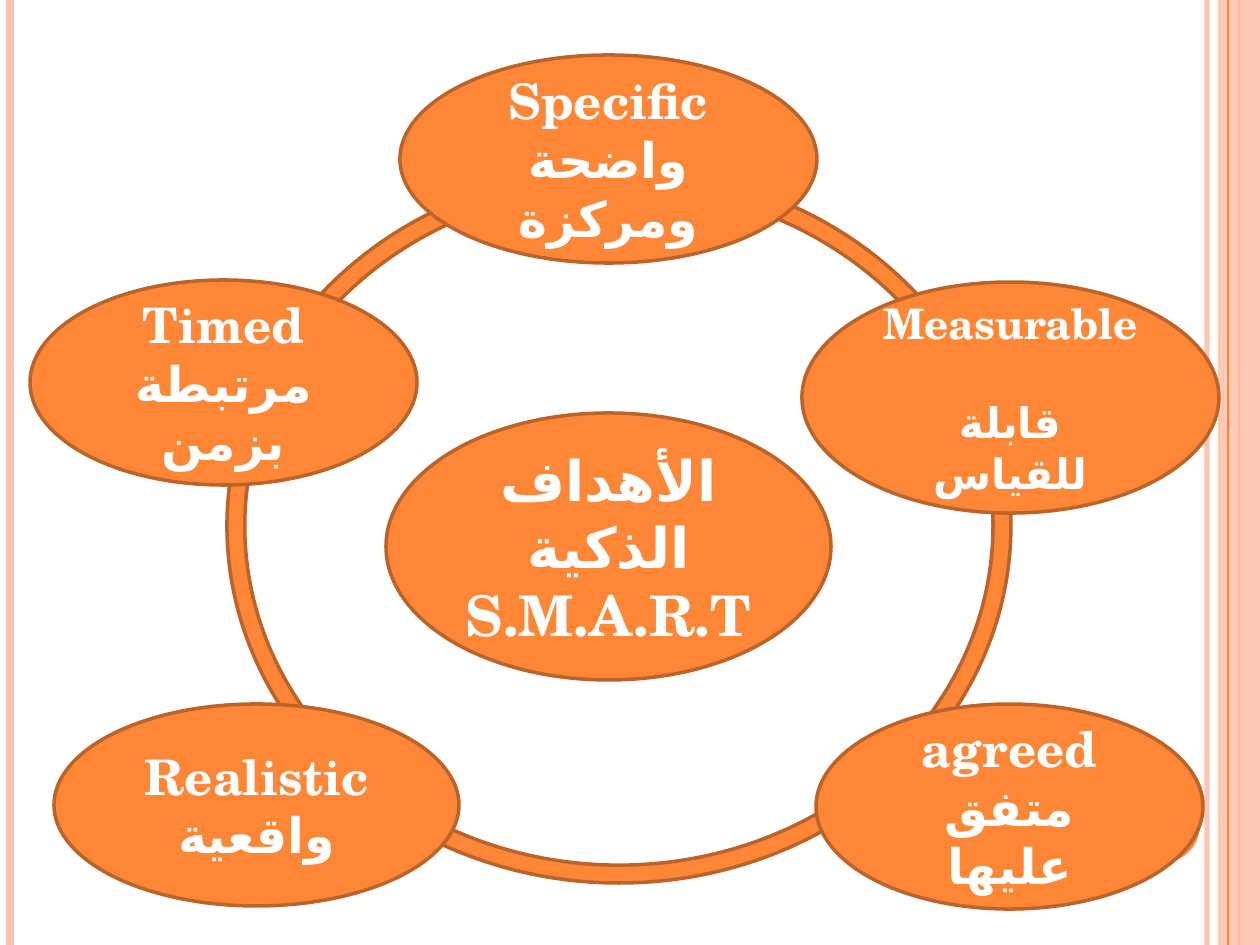
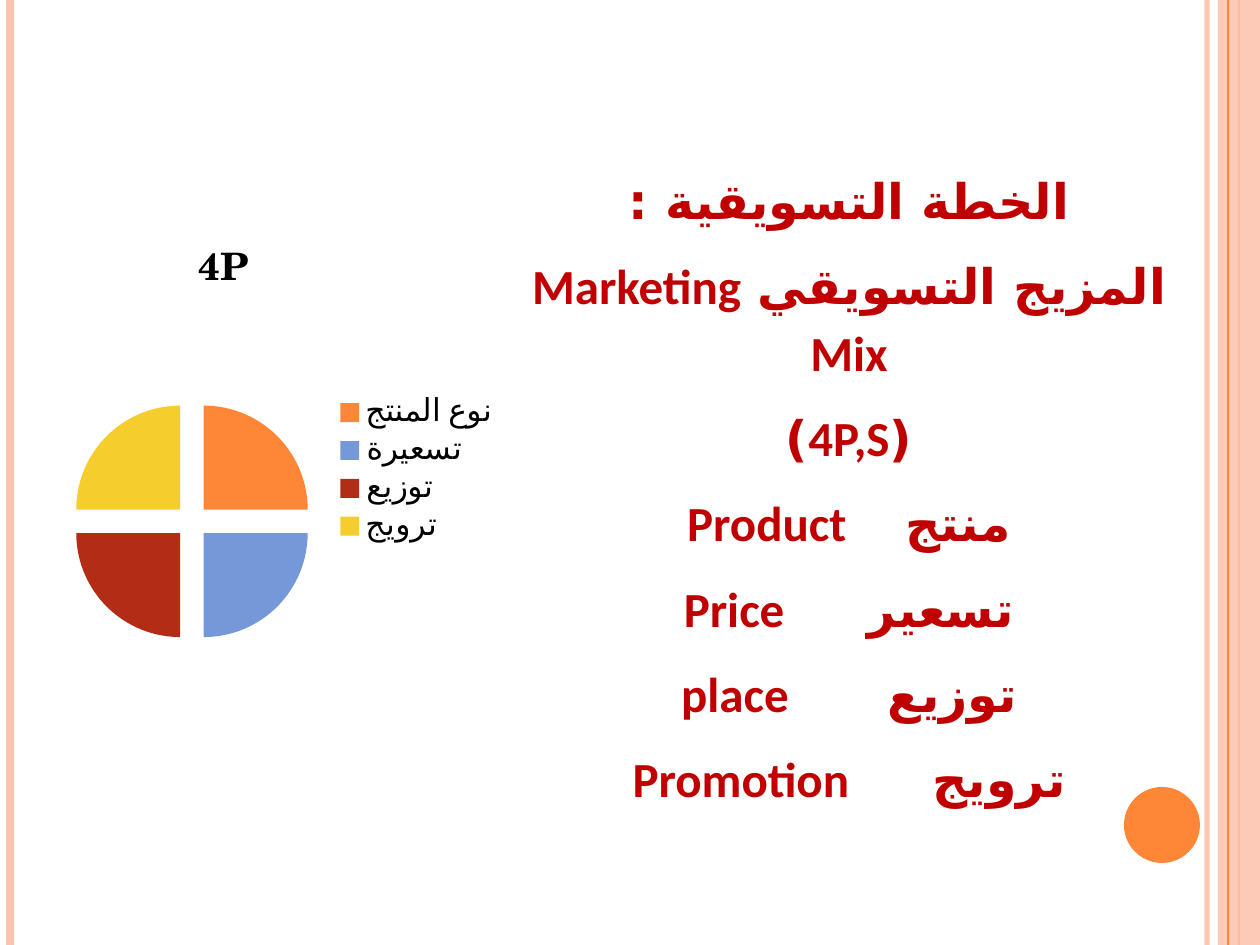
from pptx import Presentation
from pptx import util as u
from pptx.chart.data import CategoryChartData
from pptx.dml.color import RGBColor
from pptx.enum import chart as charts, shapes, text
from pptx.oxml.xmlchemy import OxmlElement

EMU_PER_PX = 914400 / 126
WIDTH, HEIGHT = 1260, 945

ORANGE = RGBColor(0xFE, 0x86, 0x37)
BROWN = RGBColor(0xBC, 0x63, 0x29)
PEACH = RGBColor(0xFE, 0xC3, 0xAE)
RED = RGBColor(0xC0, 0x00, 0x00)
WHITE = RGBColor(0xFF, 0xFF, 0xFF)
BLACK = RGBColor(0x00, 0x00, 0x00)
SLICE_COLORS = [ORANGE, RGBColor(0x75, 0x98, 0xD9),
                RGBColor(0xB3, 0x2C, 0x16), RGBColor(0xF5, 0xCD, 0x2D)]

SERIF = "TeX Gyre Schola"
SANS = "Calibri"
ARABIC = "DejaVu Sans"
LINE_BREAK = "\v"

# Box, text size, first-line shift to the right, space between paragraphs, paragraphs.
# A number inside a paragraph is a gap in points.
SMART_CENTER = ((386, 413, 445, 267), 32, 0, 0, [["الأهداف الذكية"], ["S.M.A.R.T"]])
SMART_GOALS = [
    ((400, 55, 417, 208), 28, 6, 0, [["Specific", LINE_BREAK, "واضحة ومركزة"]]),
    ((802, 282, 417, 231), 24, 5, 28, [["Measurable"], ["قابلة للقياس"]]),
    ((816, 704, 387, 205), 28, 35, 0, [["agreed", LINE_BREAK, "متفق عليها"]]),
    ((30, 280, 387, 205), 28, 27, 0, [["Timed", LINE_BREAK, "مرتبطة بزمن"]]),
    ((54, 704, 405, 202), 28, 14, 0, [["Realistic", LINE_BREAK, "واقعية"]]),
]
MARKETING_MIX = [
    ["الخطة التسويقية :"],
    ["المزيج التسويقي Marketing Mix"],
    ["(4P,S)"],
    ["منتج", 24, "Product"],
    ["تسعير", 38, "Price"],
    ["توزيع", 47, "place"],
    ["ترويج", 38, "Promotion"],
]


def px(*lengths):
    return [u.Emu(round(length * EMU_PER_PX)) for length in lengths]


def make_element(tag, **attributes):
    element = OxmlElement(tag)
    for name, value in attributes.items():
        element.set(name, str(value))
    return element


def set_opacity(shape, percent):
    for color in shape.element.xpath("./p:spPr//a:srgbClr"):
        color.append(make_element("a:alpha", val=percent * 1000))


def add_preset(slide, preset, box, fill, outline=None):
    shape = slide.shapes.add_shape(preset, *px(*box))
    shape.shadow.inherit = False
    shape.fill.solid()
    shape.fill.fore_color.rgb = fill
    if outline is None:
        shape.line.fill.background()
    else:
        shape.line.color.rgb = outline
        shape.line.width = u.Pt(2)
    return shape


def add_rule(slide, x, color, width):
    """Add a vertical line over the full height of the slide."""
    rule = slide.shapes.add_connector(
        shapes.MSO_CONNECTOR.STRAIGHT, *px(x, 0, x, HEIGHT))
    rule.line.color.rgb = color
    rule.line.width = u.Pt(width)
    rule.element.spPr.append(OxmlElement("a:effectLst"))
    return rule


def write_text(frame, paragraphs, *, size, color, font=SERIF,
               line_spacing=None, before=0, after=0, shift=0):
    """Write centred, bold right-to-left paragraphs; numbers are widened spaces."""
    frame.word_wrap = True
    for index, parts in enumerate(paragraphs):
        paragraph = frame.add_paragraph() if index else frame.paragraphs[0]
        paragraph.alignment = text.PP_ALIGN.CENTER
        paragraph.line_spacing = line_spacing
        paragraph.space_before = u.Pt(before if index else 0)
        paragraph.space_after = u.Pt(after)
        properties = paragraph._p.get_or_add_pPr()
        properties.set("rtl", "1")
        if shift and not index:
            # A centred line moves by half of its indent.
            properties.set("indent", str(px(-2 * shift)[0]))
        for part in parts:
            if part == LINE_BREAK:
                paragraph.add_line_break()
                continue
            run = paragraph.add_run()
            run.font.name = font
            run.font.size = u.Pt(size)
            run.font.bold = True
            run.font.color.rgb = color
            run.font._element.append(make_element("a:cs", typeface=ARABIC))
            if isinstance(part, int):
                run.text = " "
                run.font._element.set("spc", str(part * 100))
            else:
                run.text = part


def add_bubble(slide, box, size, shift, before, paragraphs):
    bubble = add_preset(slide, shapes.MSO_SHAPE.OVAL, box, ORANGE, BROWN)
    bubble.text_frame.vertical_anchor = text.MSO_ANCHOR.MIDDLE
    write_text(bubble.text_frame, paragraphs, size=size, color=WHITE,
               before=before, shift=shift)


def place_chart_title(chart, x, y):
    """Put the title's corner at fractions of the chart's width and height."""
    manual = OxmlElement("c:manualLayout")
    for tag, value in (("c:xMode", "edge"), ("c:yMode", "edge"),
                       ("c:x", x), ("c:y", y)):
        manual.append(make_element(tag, val=value))
    layout = OxmlElement("c:layout")
    layout.append(manual)
    title = chart.element.xpath("./c:chart/c:title")[0]
    for old_layout in title.xpath("./c:layout"):
        title.remove(old_layout)
    title.xpath("./c:tx")[0].addnext(layout)


def add_mix_pie(slide, box):
    data = CategoryChartData()
    data.categories = ["نوع المنتج", "تسعيرة", "توزيع", "ترويج"]
    data.add_series("Series 1", [25] * 4)
    chart = slide.shapes.add_chart(
        charts.XL_CHART_TYPE.PIE, *px(*box), data).chart
    chart.font.name = SERIF
    chart.font.size = u.Pt(18)
    chart.font.color.rgb = BLACK

    chart.has_title = True
    title = chart.chart_title.text_frame.paragraphs[0].add_run()
    title.text = "4P"
    title.font.name = SERIF
    title.font.size = u.Pt(21.6)
    title.font.bold = True
    title.font.color.rgb = BLACK
    place_chart_title(chart, 0.3, 0.18)

    chart.has_legend = True
    chart.legend.position = charts.XL_LEGEND_POSITION.RIGHT
    chart.legend.include_in_layout = False

    plot = chart.plots[0]
    plot.vary_by_categories = True
    for index, color in enumerate(SLICE_COLORS):
        fill = plot.series[0].points[index].format.fill
        fill.solid()
        fill.fore_color.rgb = color
    first_point = chart.element.xpath(".//c:ser/c:dPt")[0]
    first_point.addprevious(make_element("c:explosion", val=16))


def decorate_master(presentation, slide):
    """Draw the shared side bands on a slide, then move them to the master."""
    inner_rule = add_rule(slide, 1207, PEACH, 3)
    set_opacity(inner_rule, 93)
    left_rule = add_rule(slide, 10, PEACH, 4.5)
    edge_rule = add_rule(slide, 1239, ORANGE, 1.5)
    band = add_preset(slide, shapes.MSO_SHAPE.RECTANGLE,
                      (1218, 0, 42, HEIGHT), PEACH)
    set_opacity(band, 87)
    thin_rule = add_rule(slide, 1228, ORANGE, 0.75)
    dot = add_preset(slide, shapes.MSO_SHAPE.OVAL, (1124, 787, 76, 76), ORANGE)

    master_tree = presentation.slide_master.shapes.element
    parts = [inner_rule, left_rule, edge_rule, band, thin_rule, dot]
    for number, part in enumerate(parts, start=20):
        part.element.xpath(".//p:cNvPr")[0].set("id", str(number))
        master_tree.append(part.element)


def build_smart_slide(slide):
    add_bubble(slide, *SMART_CENTER)
    ring = add_preset(slide, shapes.MSO_SHAPE.DONUT,
                      (227, 169, 784, 714), ORANGE, BROWN)
    ring.adjustments[0] = 0.025
    for goal in SMART_GOALS:
        add_bubble(slide, *goal)


def build_mix_slide(slide):
    frame = slide.shapes.add_textbox(*px(491, 155, 716, 673)).text_frame
    write_text(frame, MARKETING_MIX, size=28, color=RED, font=SANS,
               line_spacing=1.15, after=10)
    frame.auto_size = text.MSO_AUTO_SIZE.SHAPE_TO_FIT_TEXT
    add_mix_pie(slide, (54, 86, 459, 767))


def main():
    presentation = Presentation()
    presentation.slide_width, presentation.slide_height = px(WIDTH, HEIGHT)
    blank = presentation.slide_layouts[6]
    smart_slide = presentation.slides.add_slide(blank)
    decorate_master(presentation, smart_slide)
    build_smart_slide(smart_slide)
    build_mix_slide(presentation.slides.add_slide(blank))
    presentation.save("out.pptx")


if __name__ == "__main__":
    main()
